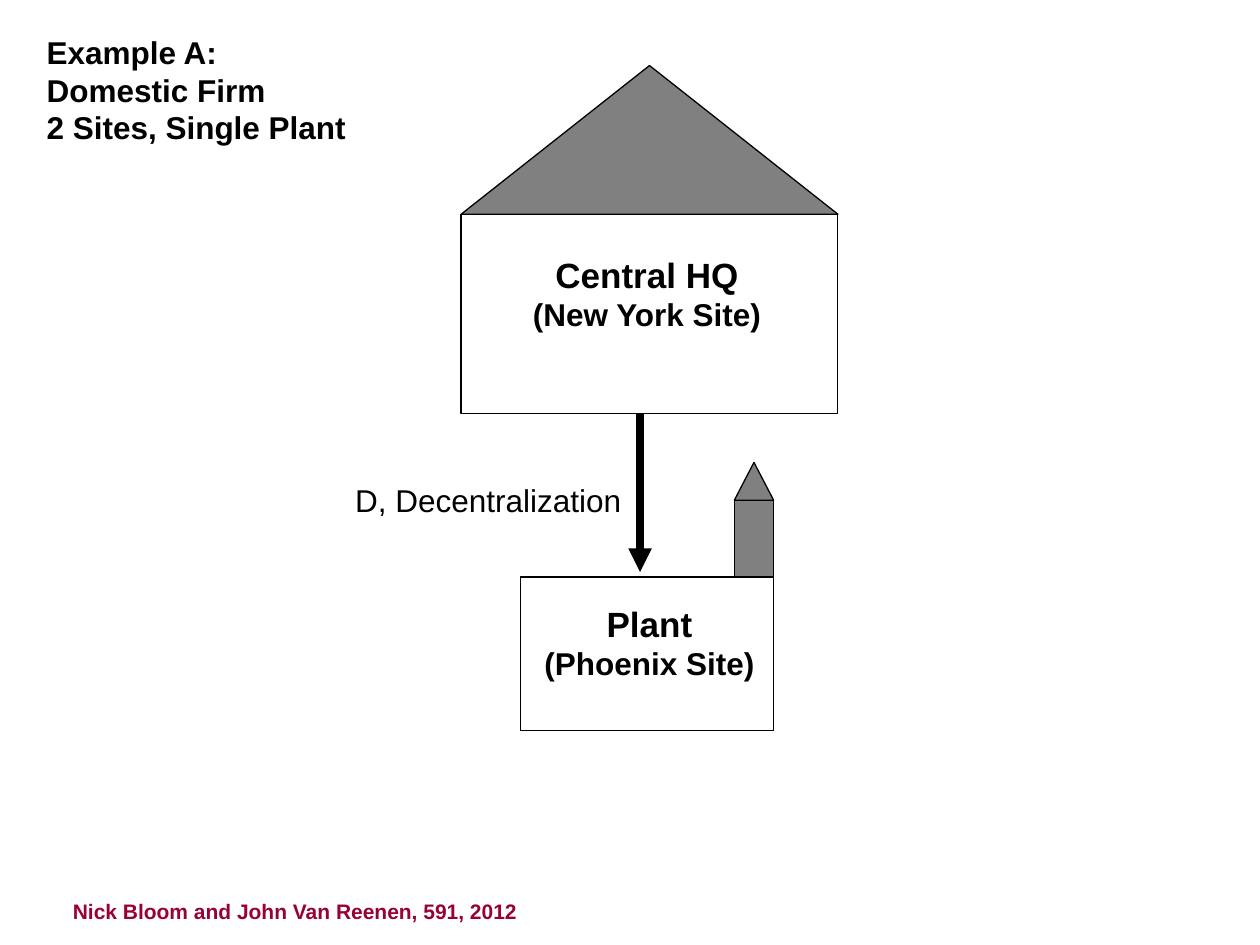
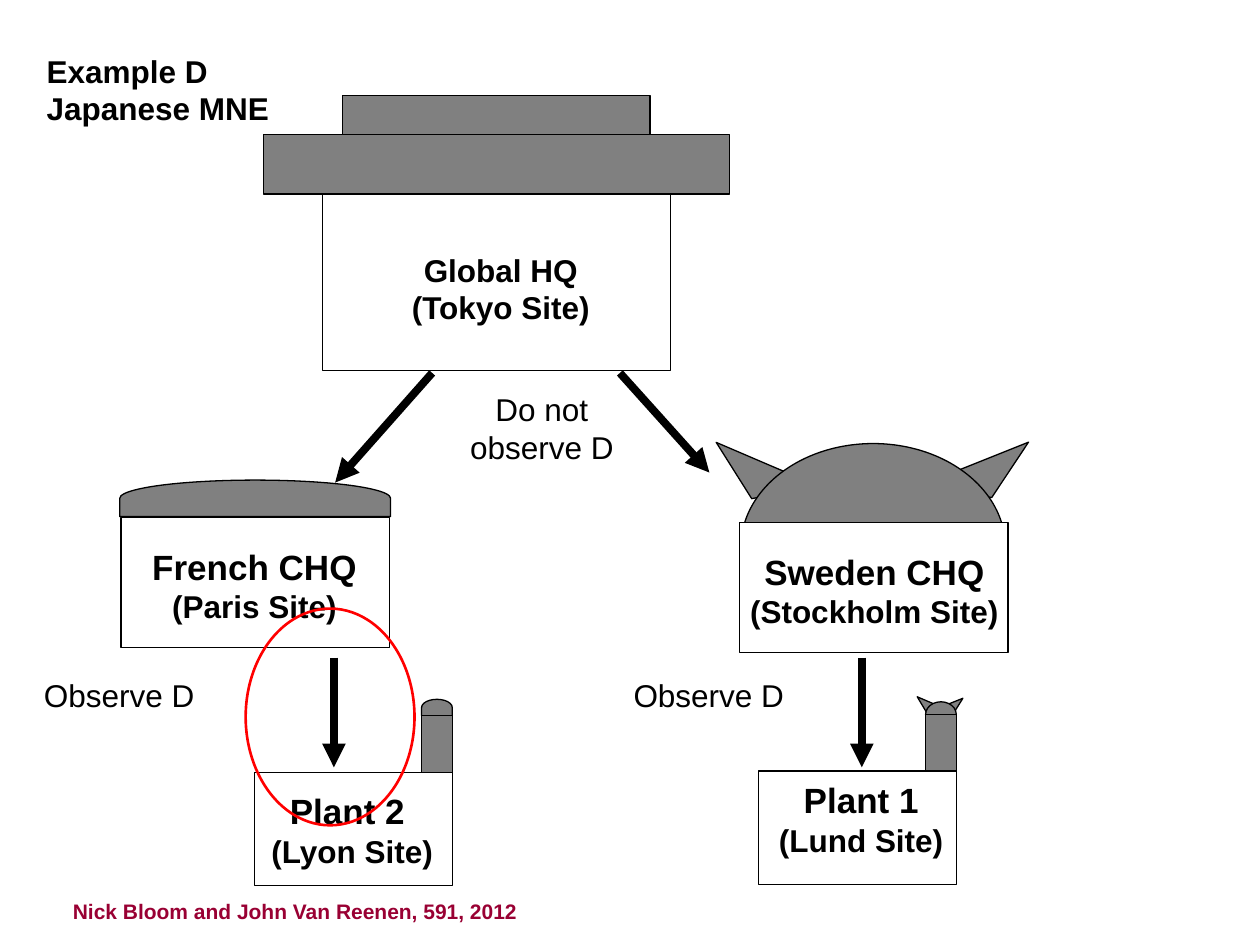
from lxml import etree
from pptx import Presentation
from pptx.dml.color import RGBColor
from pptx.enum.shapes import MSO_CONNECTOR, MSO_SHAPE
from pptx.enum.text import MSO_ANCHOR, MSO_AUTO_SIZE, PP_ALIGN
from pptx.oxml.ns import qn
from pptx.util import Inches, Pt

RECT, TRIANGLE, OVAL = MSO_SHAPE.RECTANGLE, MSO_SHAPE.ISOSCELES_TRIANGLE, MSO_SHAPE.OVAL
DELAY = MSO_SHAPE.FLOWCHART_DELAY
STRAIGHT = MSO_CONNECTOR.STRAIGHT
LEFT, CENTER = PP_ALIGN.LEFT, PP_ALIGN.CENTER
TOP = MSO_ANCHOR.TOP
NO_AUTOFIT = MSO_AUTO_SIZE.NONE

FONT = "Arial"
BLACK, WHITE, GREY, RED, MAROON = "000000", "FFFFFF", "808080", "FF0000", "990033"
HEAD, BODY, SMALL = 20, 18, 12

# The footer sits below the lowest building of any slide
FOOTER = "Nick Bloom and John Van Reenen, 591, 2012"
FOOTER_AREA = (0.48, 7.08, 3.76, 0.3)

# Content: lengths in inches; areas are (left, top, width, height).
# A roof is (preset, area, turned a quarter); horns are
# (centre x, left centre y, right centre y, gap, width, height).
# A plant is (area, cap preset, cap height); labels are
# (lines, sizes, bold, align, area, wrap).
SLIDES = [
    dict(
        title=["Example A:", "Domestic Firm", "2 Sites, Single Plant"],
        title_area=(0.27, 0.21, 2.58, 1),
        horns=[],
        roofs=[(TRIANGLE, (3.66, 0.52, 2.99, 1.18), False)],
        offices=[((3.66, 1.7, 2.99, 1.58), None)],
        plants=[((4.13, 4.58, 2.01, 1.22), TRIANGLE, 0.3)],
        arrows=[(5.08, 3.28, 5.08, 4.54)],
        labels=[
            (["Central HQ", "(New York Site)"], [HEAD, BODY], True, CENTER,
             (4.12, 1.96, 2.03, 0.73), False),
            (["Plant", "(Phoenix Site)"], [HEAD, BODY], True, CENTER,
             (4.22, 4.73, 1.87, 0.73), False),
            (["D, Decentralization"], [BODY], False, LEFT,
             (2.72, 3.77, 2.31, 0.4), False),
        ],
        highlights=[],
    ),
    dict(
        title=["Example D", "Japanese MNE"],
        title_area=(0.27, 0.36, 1.97, 0.7),
        horns=[(6.92, 3.82, 3.81, 1.79, 0.87, 0.3),
               (7.46, 5.61, 5.62, 0.19, 0.22, 0.08)],
        roofs=[
            (RECT, (2.09, 1.07, 3.7, 0.47), False),
            (RECT, (2.72, 0.76, 2.44, 0.31), False),
            (DELAY, (0.95, 3.81, 2.15, 0.29), True),
            (OVAL, (5.88, 3.52, 2.1, 1.65), False),
        ],
        offices=[((2.56, 1.54, 2.76, 1.4), None),
                 ((0.96, 4.11, 2.13, 1.03), None),
                 ((5.87, 4.15, 2.13, 1.03), WHITE)],
        plants=[((2.02, 6.13, 1.57, 0.9), DELAY, 0.13),
                ((6.02, 6.12, 1.57, 0.9), OVAL, 0.2)],
        arrows=[(3.43, 2.96, 2.66, 3.83), (4.92, 2.96, 5.63, 3.75),
                (6.84, 5.22, 6.84, 6.09), (2.65, 5.22, 2.65, 6.09)],
        labels=[
            (["Global HQ", "(Tokyo Site)"], [BODY, BODY], True, CENTER,
             (3.16, 1.94, 1.63, 0.7), False),
            (["French CHQ", "(Paris Site)"], [HEAD, BODY], True, CENTER,
             (1.11, 4.28, 1.82, 0.73), False),
            (["Sweden CHQ", "(Stockholm Site)"], [HEAD, BODY], True, CENTER,
             (5.81, 4.32, 2.26, 0.73), True),
            (["Plant 2 ", "(Lyon Site)"], [HEAD, BODY], True, CENTER,
             (2.05, 6.22, 1.49, 0.73), False),
            (["Plant 1", "(Lund Site)"], [HEAD, BODY], True, CENTER,
             (6.08, 6.13, 1.51, 0.73), False),
            (["Do not observe D"], [BODY], False, CENTER,
             (3.59, 3.05, 1.42, 0.7), True),
            (["Observe D"], [BODY], False, LEFT, (0.25, 5.32, 1.4, 0.4), False),
            (["Observe D"], [BODY], False, LEFT, (4.93, 5.32, 1.4, 0.4), False),
        ],
        highlights=[(1.95, 4.83, 1.34, 1.72)],
    ),
]


def color(value):
    return RGBColor.from_string(value)


def inches(values):
    return [Inches(value) for value in values]


def fill_text(shape, lines, sizes, bold, align, wrap, ink=BLACK):
    frame = shape.text_frame
    frame.text = "\n".join(lines)
    frame.word_wrap = wrap
    frame.auto_size = NO_AUTOFIT
    frame.vertical_anchor = TOP
    for para, size in zip(frame.paragraphs, sizes):
        para.alignment = align
        for span in para.runs:
            span.font.name, span.font.size, span.font.bold = FONT, Pt(size), bold
            span.font.color.rgb = color(ink)


def add_label(slide, lines, sizes, bold, align, area, wrap, ink=BLACK):
    box = slide.shapes.add_textbox(*inches(area))
    fill_text(box, lines, sizes, bold, align, wrap, ink)


def add_part(slide, preset, area, fill=None, line=BLACK, weight=0.75, turn=0):
    shape = slide.shapes.add_shape(preset, *inches(area))
    shape.shadow.inherit = False
    shape.rotation = turn
    if fill:
        shape.fill.solid()
        shape.fill.fore_color.rgb = color(fill)
    else:
        shape.fill.background()
    shape.line.color.rgb = color(line)
    shape.line.width = Pt(weight)


def add_roof(slide, preset, area, turned):
    """Draw a grey roof; a turned one is swapped so that it covers the area."""
    left, top, width, height = area
    if turned:
        shift = (width - height) / 2
        area = (left + shift, top - shift, height, width)
    add_part(slide, preset, area, GREY, turn=270 if turned else 0)


def add_horns(slide, center, left_y, right_y, gap, width, height):
    for side, middle_y, turn in ((-1, left_y, 203.2), (1, right_y, 158.2)):
        middle_x = center + side * gap / 2
        area = (middle_x - width / 2, middle_y - height / 2, width, height)
        add_part(slide, TRIANGLE, area, GREY, turn=turn)


def add_plant(slide, area, cap, cap_height):
    """Draw a plant whose chimney stands flush with its right wall."""
    left, top, width, height = area
    chimney_width, chimney_height = width * 0.155, height / 2
    chimney_left = left + width - chimney_width
    chimney_top = top - chimney_height
    # A round cap reaches halfway behind the chimney
    cap_top = chimney_top - cap_height / (2 if cap == OVAL else 1)
    add_roof(slide, cap, (chimney_left, cap_top, chimney_width, cap_height), cap == DELAY)
    add_part(slide, RECT, (chimney_left, chimney_top, chimney_width, chimney_height), GREY)
    add_part(slide, RECT, area)


def add_arrow(slide, ends):
    arrow = slide.shapes.add_connector(STRAIGHT, *inches(ends))
    arrow.line.color.rgb = color(BLACK)
    arrow.line.width = Pt(4.5)
    properties = arrow.element.spPr
    etree.SubElement(properties.find(qn("a:ln")), qn("a:tailEnd"), type="triangle")
    etree.SubElement(properties, qn("a:effectLst"))


def add_slide(deck, content):
    slide = deck.slides.add_slide(deck.slide_layouts[5])
    # Title and footer
    title = slide.shapes.title
    title.left, title.top, title.width, title.height = inches(content["title_area"])
    lines = content["title"]
    fill_text(title, lines, [BODY] * len(lines), True, LEFT, False)
    add_label(slide, [FOOTER], [SMALL], True, LEFT, FOOTER_AREA, False, MAROON)
    # Buildings, from back to front
    for horns in content["horns"]:
        add_horns(slide, *horns)
    for roof in content["roofs"]:
        add_roof(slide, *roof)
    for area, fill in content["offices"]:
        add_part(slide, RECT, area, fill)
    for plant in content["plants"]:
        add_plant(slide, *plant)
    # Links, labels and highlights
    for ends in content["arrows"]:
        add_arrow(slide, ends)
    for label in content["labels"]:
        add_label(slide, *label)
    for area in content["highlights"]:
        add_part(slide, OVAL, area, line=RED, weight=1.5)


def main():
    deck = Presentation()
    deck.slide_width, deck.slide_height = Inches(10), Inches(7.5)
    for content in SLIDES:
        add_slide(deck, content)
    deck.save("out.pptx")


if __name__ == "__main__":
    main()
